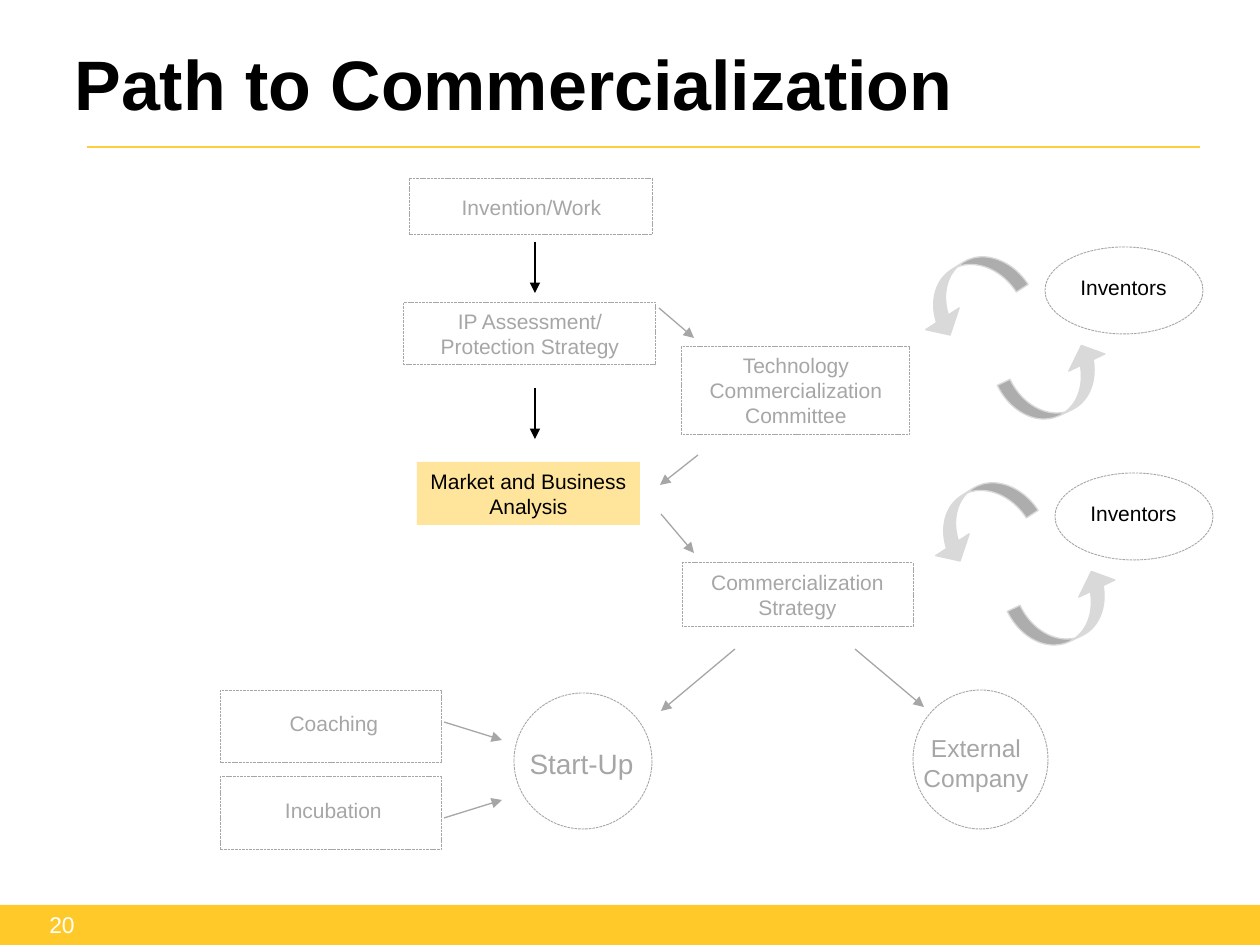
from lxml import etree
from pptx import Presentation
from pptx.dml.color import RGBColor
from pptx.enum.dml import MSO_LINE
from pptx.enum.shapes import MSO_CONNECTOR, MSO_SHAPE
from pptx.enum.text import MSO_ANCHOR, PP_ALIGN
from pptx.oxml.ns import qn
from pptx.util import Pt

RECT, OVAL = MSO_SHAPE.RECTANGLE, MSO_SHAPE.OVAL
CURVE = MSO_SHAPE.CURVED_RIGHT_ARROW
LINE = MSO_CONNECTOR.STRAIGHT
DASH = MSO_LINE.SQUARE_DOT
TOP, MIDDLE = MSO_ANCHOR.TOP, MSO_ANCHOR.MIDDLE
LEFT, CENTER, RIGHT = PP_ALIGN.LEFT, PP_ALIGN.CENTER, PP_ALIGN.RIGHT


class Theme:
    font = "Arial"
    black = RGBColor.from_string("000000")
    white = RGBColor.from_string("FFFFFF")
    gray = RGBColor.from_string("A6A6A6")
    pale = RGBColor.from_string("D9D9D9")
    gold = RGBColor.from_string("FFCA29")
    rule = RGBColor.from_string("FFCD3F")
    focus = RGBColor.from_string("FFE59B")
    title, large, mid, page, body = 40, 16, 14, 13, 12


SCALE = 914400 / 126  # EMU in one px

deck = Presentation()
deck.slide_width, deck.slide_height = round(1260 * SCALE), round(945 * SCALE)
slide = deck.slides.add_slide(deck.slide_layouts[6])
shapes = slide.shapes


def add_box(kind, box, text="", size=Theme.body, color=Theme.gray,
            fill=None, edge=None, align=CENTER, anchor=TOP):
    """Add a shape, or a text box when kind is None; edge is color, width, dash."""
    place = [round(v * SCALE) for v in box]
    if kind is None:
        shape = shapes.add_textbox(*place)
    else:
        shape = shapes.add_shape(kind, *place)
        shape.shadow.inherit = False
    if fill is None:
        shape.fill.background()
    else:
        shape.fill.solid()
        shape.fill.fore_color.rgb = fill
    if edge is None:
        shape.line.fill.background()
    else:
        shape.line.color.rgb, shape.line.width, shape.line.dash_style = edge
    if text:
        frame = shape.text_frame
        frame.word_wrap = True
        frame.vertical_anchor = anchor
        frame.text = text
        for para in frame.paragraphs:
            para.alignment = align
            for run in para.runs:
                run.font.name = Theme.font
                run.font.size = Pt(size)
                run.font.color.rgb = color
    return shape


def add_line(ends, color, width=0.75, head=True):
    line = shapes.add_connector(LINE, *[round(v * SCALE) for v in ends])
    line.line.color.rgb = color
    line.line.width = Pt(width)
    if head:
        etree.SubElement(line.line._get_or_add_ln(), qn("a:tailEnd"), type="triangle")
    etree.SubElement(line._element.spPr, qn("a:effectLst"))


dashed = (Theme.gray, Pt(0.5), DASH)
plain = (Theme.pale, Pt(0.75), None)

# Title, rule and footer
add_box(RECT, (0, 905, 1260, 40), fill=Theme.gold)
add_box(None, (0, 905, 87, 39), "20", Theme.page, Theme.white,
        align=RIGHT, anchor=MIDDLE)
title = add_box(None, (62, 34, 915, 97), "Path to Commercialization",
                Theme.title, Theme.black, align=LEFT)
title.text_frame.paragraphs[0].runs[0].font.bold = True
add_line((87, 147, 1200, 147), Theme.rule, 1, head=False)

# Steps
steps = [
    ((404, 302, 252, 63), "IP Assessment/\nProtection Strategy"),
    ((682, 346, 228, 89), "Technology Commercialization Committee"),
    ((682, 563, 231, 64), "Commercialization Strategy"),
]
for box, text in steps:
    add_box(RECT, box, text, edge=dashed)
add_box(RECT, (417, 462, 223, 63), "Market and Business Analysis",
        color=Theme.black, fill=Theme.focus)

# Outlines with a label of their own
labeled = [
    (RECT, (409, 178, 243, 57), (447, 188, 169, 38), "Invention/Work", Theme.body),
    (RECT, (220, 690, 222, 73), (233, 704, 202, 38), "Coaching", Theme.body),
    (RECT, (220, 777, 221, 73), (233, 791, 201, 38), "Incubation", Theme.body),
    (OVAL, (514, 693, 138, 136), (496, 740, 171, 47), "Start-Up", Theme.large),
    (OVAL, (913, 690, 135, 139), (903, 727, 146, 72), "External\vCompany", Theme.mid),
]
for kind, box, place, text, size in labeled:
    add_box(kind, box, edge=dashed)
    add_box(None, place, text, size)

# Inventors with their feedback loops
for dx, dy in [(0, 0), (10, 226)]:
    add_box(OVAL, (1045 + dx, 247 + dy, 158, 87), edge=dashed)
    add_box(None, (1063 + dx, 268 + dy, 121, 39), "Inventors", color=Theme.black)
    for left, top, turn in [(939, 236, 57), (1033, 329, 244.6)]:
        curve = add_box(CURVE, (left + dx, top + dy, 54, 113),
                        fill=Theme.pale, edge=plain)
        curve.rotation = turn
        for i, value in enumerate((0.26, 0.74, 0.33)):
            curve.adjustments[i] = value

# Arrows between the steps
for top in (242, 388):
    add_line((535, top, 535, top + 51), Theme.black)
arrows = [
    (659, 308, 694, 338),
    (698, 455, 660, 485),
    (661, 514, 694, 553),
    (855, 649, 924, 707),
    (735, 649, 661, 711),
    (444, 818, 502, 800),
    (444, 722, 502, 740),
]
for ends in arrows:
    add_line(ends, Theme.gray)

deck.save("out.pptx")
